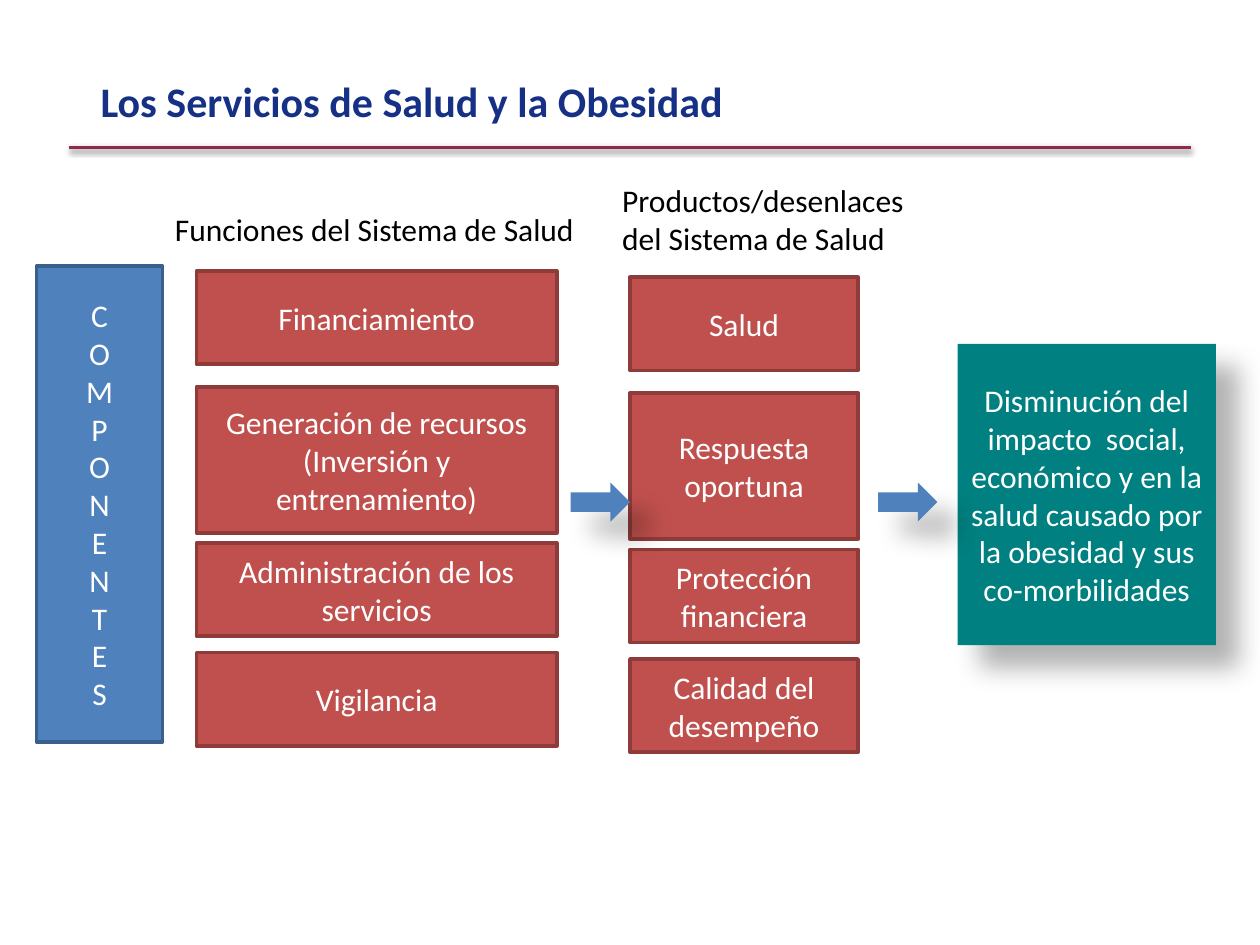
"""Build the slide on health services and obesity."""
import pptx
import pptx.dml.color
import pptx.enum.shapes
import pptx.enum.text
import pptx.oxml
import pptx.util
from pptx.util import Inches

HUES = {
    "title": "153085", "rule": "8F2950", "blue": "4F81BD", "navy": "3A5F8C",
    "red": "C0504D", "brick": "8E3B39", "teal": "008080",
    "white": "FFFFFF", "black": "000000",
}
RGB = {name: pptx.dml.color.RGBColor.from_string(code) for name, code in HUES.items()}
KINDS = pptx.enum.shapes.MSO_SHAPE
ALIGN = pptx.enum.text.PP_ALIGN
NS = "http://schemas.openxmlformats.org/drawingml/2006/main"
SOFT = {"alpha": 30, "blur": 15, "dist": 18, "turn": 45}


def write(item, lines, hue, align, frame, size=18, bold=False):
    """Fill a text frame and format its paragraphs."""
    body = item.text_frame
    for key, val in frame.items():
        setattr(body, key, val)
    body.text = "\n".join(lines)
    style = {"name": "Calibri", "size": pptx.util.Pt(size), "bold": bold}
    for para in body.paragraphs:
        para.alignment = align
        for run in para.runs:
            for key, val in style.items():
                setattr(run.font, key, val)
            run.font.color.rgb = RGB[hue]


def shade(item, alpha, blur, dist, turn):
    """Add an outer shadow, with lengths in points."""
    item.element.spPr.append(pptx.oxml.parse_xml(
        f'<a:effectLst xmlns:a="{NS}"><a:outerShdw blurRad="{pptx.util.Pt(blur)}" '
        f'dist="{pptx.util.Pt(dist)}" dir="{turn * 60000}" algn="tl" rotWithShape="0">'
        f'<a:srgbClr val="{HUES["black"]}"><a:alpha val="{alpha * 1000}"/></a:srgbClr>'
        '</a:outerShdw></a:effectLst>'))


deck = pptx.Presentation()
deck.slide_width, deck.slide_height = Inches(10), Inches(7.5)
slide = deck.slides.add_slide(deck.slide_layouts[6])
shapes = slide.shapes

rule = shapes.add_connector(
    pptx.enum.shapes.MSO_CONNECTOR.STRAIGHT,
    Inches(0.55), Inches(1.17), Inches(9.45), Inches(1.17))
rule.line.color.rgb = RGB["rule"]
rule.line.width = pptx.util.Pt(2)
shade(rule, alpha=38, blur=3.1, dist=1.6, turn=90)

heads = [
    ((0.7, 0.55, 8.28, 0.5), ["Los Servicios de Salud y la Obesidad"], "title", 24, True, True),
    ((1.29, 1.62, 3.41, 0.4), ["Funciones del Sistema de Salud"], "black", 18, False, False),
    ((4.84, 1.39, 2.56, 0.71), ["Productos/desenlaces", "del Sistema de Salud"],
     "black", 18, False, True),
]
for place, lines, hue, size, bold, wrap in heads:
    label = shapes.add_textbox(*map(Inches, place))
    frame = {"word_wrap": wrap, "auto_size": pptx.enum.text.MSO_AUTO_SIZE.SHAPE_TO_FIT_TEXT}
    write(label, lines, hue, ALIGN.LEFT, frame, size, bold)

boxes = [((0.29, 2.11, 1, 3.78), list("COMPONENTES"), "blue", "navy")]
rows = [(0, 0.74), (0.92, 1.16), (2.16, 0.74), (3.03, 0.74)]
tasks = [["Financiamiento"], ["Generación de recursos", "(Inversión y entrenamiento)"],
         ["Administración de los servicios"], ["Vigilancia"]]
goals = [["Salud"], ["Respuesta oportuna"], ["Protección financiera"], ["Calidad del desempeño"]]
for left, top, width, texts in [(1.56, 2.15, 2.86, tasks), (5, 2.2, 1.81, goals)]:
    for (drop, height), lines in zip(rows, texts):
        boxes.append(((left, top + drop, width, height), lines, "red", "brick"))
boxes.append(((7.6, 2.73, 2.05, 2.39), [
    "Disminución del impacto  social, económico y en la salud causado por "
    "la obesidad y sus co-morbilidades"], "teal", None))

middle = {"word_wrap": True, "vertical_anchor": pptx.enum.text.MSO_ANCHOR.MIDDLE}
for place, lines, fill, edge in boxes:
    box = shapes.add_shape(KINDS.RECTANGLE, *map(Inches, place))
    box.fill.solid()
    box.fill.fore_color.rgb = RGB[fill]
    if edge:
        box.line.color.rgb = RGB[edge]
        box.line.width = pptx.util.Pt(2)
        box.shadow.inherit = False
    else:
        box.line.fill.background()
        shade(box, **SOFT)
    write(box, lines, "white", ALIGN.CENTER, middle)

for left in (4.53, 6.97):
    arrow = shapes.add_shape(
        KINDS.RIGHT_ARROW, Inches(left), Inches(3.83), Inches(0.47), Inches(0.31))
    arrow.fill.solid()
    arrow.fill.fore_color.rgb = RGB["blue"]
    arrow.line.fill.background()
    shade(arrow, **SOFT)

deck.save("out.pptx")
